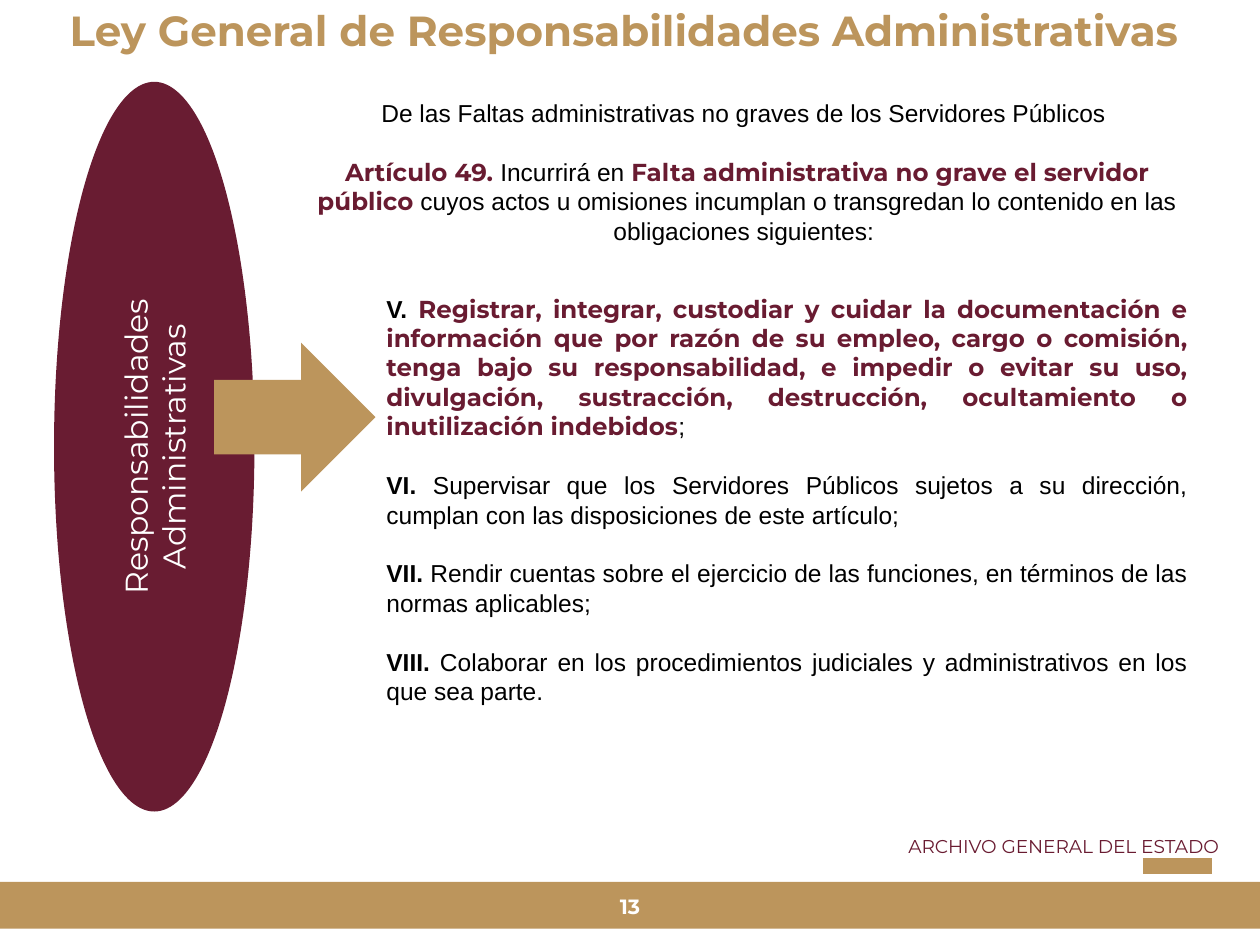
import pptx
import pptx.dml.color
import pptx.enum.shapes
import pptx.enum.text
import pptx.oxml
import pptx.util

Cm, Pt = pptx.util.Cm, pptx.util.Pt
SHAPE = pptx.enum.shapes.MSO_SHAPE
ALIGN = pptx.enum.text.PP_ALIGN
ANCHOR = pptx.enum.text.MSO_ANCHOR

COLORS = {"gold": "BC955C", "wine": "691C32", "crimson": "691B31",
          "white": "FFFFFF", "black": "000000"}

# Character formats
PLAIN = {"name": "Arial", "size": Pt(14), "bold": False, "color": "black"}
NUMERAL = {**PLAIN, "bold": True}
STRONG = {"name": "Montserrat", "size": Pt(14), "bold": True, "color": "crimson"}
TITLE = {**STRONG, "size": Pt(24), "color": "gold"}
PAGE = {**STRONG, "size": Pt(11.8), "color": "white"}
FOOTER = {**STRONG, "size": Pt(10.6), "bold": False}
LABEL = {**FOOTER, "size": Pt(18), "color": "white"}

# Paragraph formats
CENTER = {"alignment": ALIGN.CENTER, "line_spacing": 1.0, "space_before": Pt(0)}
TIGHT = {**CENTER, "line_spacing": 0.9}
BODY = {**CENTER, "line_spacing": Pt(16.8)}
JUSTIFIED = {**BODY, "alignment": ALIGN.JUSTIFY}
GAP = Pt(16.8)

INTRO = [
    [("De las Faltas administrativas no graves de los Servidores Públicos ", PLAIN)],
    [("Artículo 49. ", STRONG), ("Incurrirá en ", PLAIN),
     ("Falta administrativa no grave el servidor público ", STRONG),
     ("cuyos actos u omisiones incumplan o transgredan lo contenido en las "
      "obligaciones siguientes: ", PLAIN)],
]
DUTIES = [
    [("V. ", NUMERAL),
     ("Registrar, integrar, custodiar y cuidar la documentación e información que "
      "por razón de su empleo, cargo o comisión, tenga bajo su responsabilidad, e "
      "impedir o evitar su uso, divulgación, sustracción, destrucción, ocultamiento "
      "o inutilización indebidos", STRONG), (";", PLAIN)],
    [("VI. ", NUMERAL),
     ("Supervisar que los Servidores Públicos sujetos a su dirección, cumplan con "
      "las disposiciones de este artículo;", PLAIN)],
    [("VII. ", NUMERAL),
     ("Rendir cuentas sobre el ejercicio de las funciones, en términos de las "
      "normas aplicables;", PLAIN)],
    [("VIII. ", NUMERAL),
     ("Colaborar en los procedimientos judiciales y administrativos en los que sea "
      "parte.", PLAIN)],
]


def rgb(name):
    return pptx.dml.color.RGBColor.from_string(COLORS[name])


def write(sp, paragraphs, style, insets=(0.25, 0.13), anchor=ANCHOR.TOP):
    """Fill a shape with paragraphs, each a list of (text, format) runs."""
    tf = sp.text_frame
    side, end = (Cm(v) for v in insets)
    frame = {"word_wrap": True, "auto_size": pptx.enum.text.MSO_AUTO_SIZE.NONE,
             "vertical_anchor": anchor, "margin_left": side, "margin_right": side,
             "margin_top": end, "margin_bottom": end}
    for key, value in frame.items():
        setattr(tf, key, value)
    for i, runs in enumerate(paragraphs):
        p = tf.add_paragraph() if i else tf.paragraphs[0]
        for key, value in style.items():
            setattr(p, key, value)
        if i:
            p.space_before = GAP
        for text, fmt in runs:
            r = p.add_run()
            r.text = text
            for key, value in fmt.items():
                if key == "color":
                    r.font.color.rgb = rgb(value)
                else:
                    setattr(r.font, key, value)


def add_text(s, box, paragraphs, style, **frame):
    sp = s.shapes.add_textbox(*map(Cm, box))
    write(sp, paragraphs, style, **frame)


def add_block(s, kind, box, color):
    sp = s.shapes.add_shape(kind, *map(Cm, box))
    sp.shadow.inherit = False
    sp.fill.solid()
    sp.fill.fore_color.rgb = rgb(color)
    sp.line.fill.background()
    return sp


def add_line(s, x1, x2, y, color, width):
    ln = s.shapes.add_connector(pptx.enum.shapes.MSO_CONNECTOR.STRAIGHT,
                                Cm(x1), Cm(y), Cm(x2), Cm(y))
    ln.line.color.rgb = rgb(color)
    ln.line.width = Pt(width)
    ln._element.spPr.append(pptx.oxml.parse_xml(
        '<a:effectLst xmlns:a="http://schemas.openxmlformats.org/drawingml/2006/main"/>'))


def set_title(s, box, text):
    sp = s.shapes.title
    sp.left, sp.top, sp.width, sp.height = map(Cm, box)
    write(sp, [[(text, TITLE)]], CENTER, insets=(0.23, 0.1))


def main():
    prs = pptx.Presentation()
    prs.slide_width, prs.slide_height = Cm(25.4), Cm(19.05)
    s = prs.slides.add_slide(prs.slide_layouts[5])

    # Footer
    add_block(s, SHAPE.RECTANGLE, (-0.05, 17.78, 25.55, 0.94), "gold")
    add_text(s, (12.09, 17.83, 1.22, 0.94), [[("13", PAGE)]], TIGHT,
             insets=(0.25, 0.25), anchor=ANCHOR.MIDDLE)
    add_text(s, (11.89, 16.74, 12.83, 0.71), [[("ARCHIVO GENERAL DEL ESTADO", FOOTER)]],
             {**TIGHT, "alignment": ALIGN.RIGHT}, insets=(0.15, 0.15))
    add_line(s, 23.04, 24.43, 17.45, "gold", 9)

    # Title
    set_title(s, (0, 0, 25.15, 1.24), "Ley General de Responsabilidades Administrativas")

    # Topic and arrow
    sp = add_block(s, SHAPE.OVAL, (1.09, 1.65, 4.04, 14.71), "wine")
    write(sp, [[("Responsabilidades Administrativas", LABEL)]], CENTER,
          insets=(0.2, 0.1), anchor=ANCHOR.MIDDLE)
    sp.text_frame._txBody.bodyPr.set("vert", "vert270")
    add_block(s, SHAPE.RIGHT_ARROW, (4.32, 6.91, 3.25, 3), "gold")

    # Article text
    add_text(s, (7.54, 5.79, 16.66, 8.64), DUTIES, JUSTIFIED)
    add_text(s, (5.92, 1.85, 18.29, 3.25), INTRO, BODY)

    prs.save("out.pptx")


if __name__ == "__main__":
    main()
